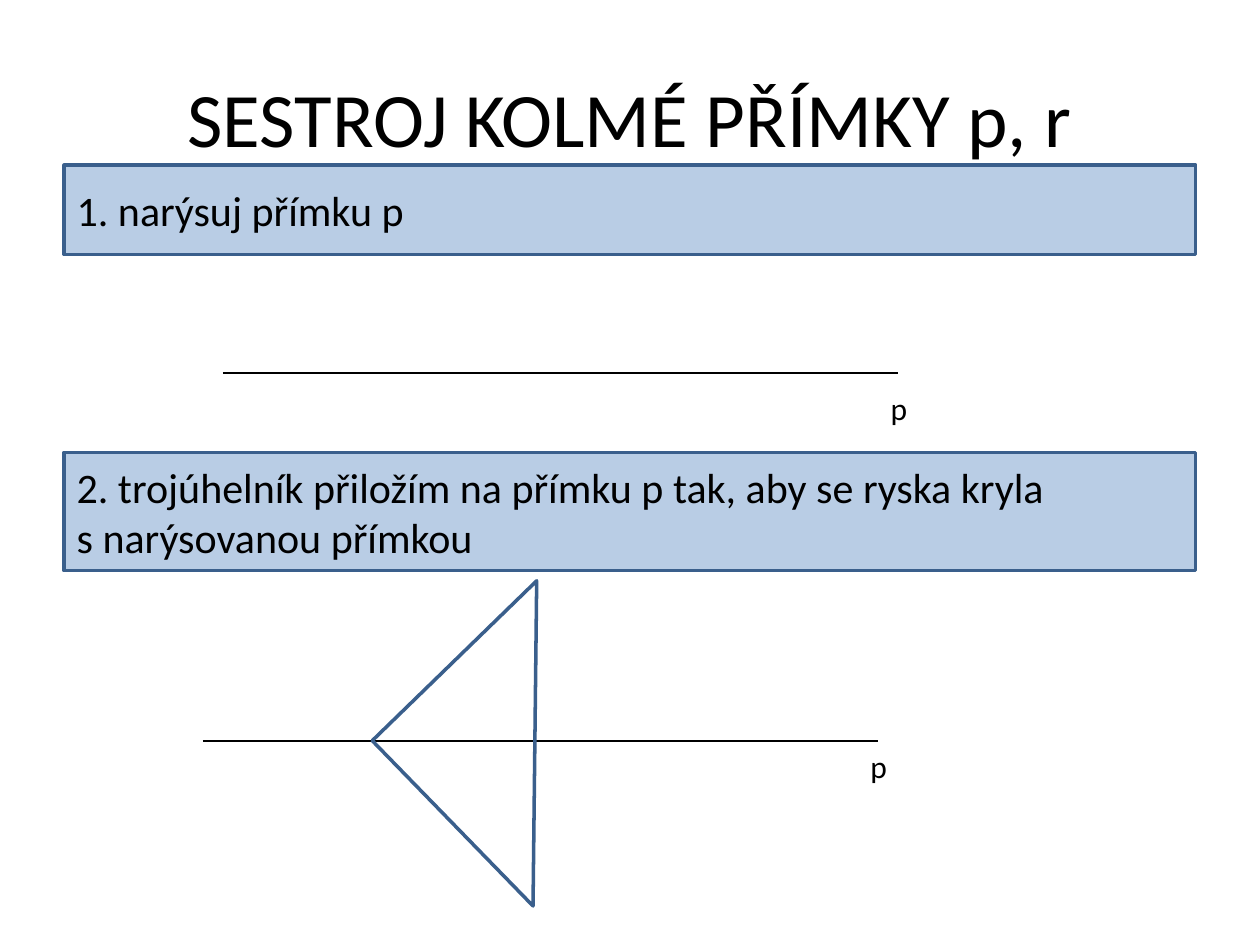
from lxml import etree
from pptx import Presentation
from pptx import util as u
from pptx.dml.color import RGBColor
from pptx.enum import shapes, text
from pptx.oxml.ns import qn

Inches = u.Inches


def tint(code):
    return RGBColor.from_string(code)


def write(frame, lines, size, align=text.PP_ALIGN.LEFT):
    for i, line in enumerate(lines):
        para = frame.paragraphs[0] if i == 0 else frame.add_paragraph()
        para.alignment = align
        run = para.add_run()
        run.text = line
        run.font.size = u.Pt(size)
        run.font.name = "Calibri"
        run.font.color.rgb = tint("000000")


deck = Presentation()
deck.slide_width, deck.slide_height = Inches(10), Inches(7.5)
slide = deck.slides.add_slide(deck.slide_layouts[5])
items = slide.shapes

title = slide.shapes.title
title.left, title.top = Inches(0.5), Inches(0.3)
title.width, title.height = Inches(9), Inches(1.25)
title.text_frame.vertical_anchor = text.MSO_ANCHOR.MIDDLE
write(title.text_frame, ["SESTROJ KOLMÉ PŘÍMKY p, r"], 44, text.PP_ALIGN.CENTER)

# Each step: box top, box height, wording, line start, line height, label top
steps = [
    (1.31, 0.71, ["1. narýsuj přímku p"], 1.77, 2.96, 3.04),
    (3.59, 0.94, ["2. trojúhelník přiložím na přímku p tak, aby se ryska kryla",
                  "s narýsovanou přímkou"], 1.61, 5.88, 5.88),
]
for top, high, lines, left, level, below in steps:
    box = items.add_shape(shapes.MSO_SHAPE.RECTANGLE, Inches(0.51), Inches(top),
                          Inches(8.98), Inches(high))
    box.shadow.inherit = False
    box.fill.solid()
    box.fill.fore_color.rgb = tint("B9CDE5")
    box.line.color.rgb = tint("3A5F8C")
    box.line.width = u.Pt(2)
    box.text_frame.word_wrap = True
    box.text_frame.vertical_anchor = text.MSO_ANCHOR.MIDDLE
    write(box.text_frame, lines, 24)

    line = items.add_connector(shapes.MSO_CONNECTOR.STRAIGHT, Inches(left), Inches(level),
                               Inches(left + 5.36), Inches(level))
    line.line.color.rgb = tint("000000")
    line.line.width = u.Pt(0.75)
    etree.SubElement(line._element.spPr, qn("a:effectLst"))

    label = items.add_textbox(Inches(left + 5.2), Inches(below), Inches(0.39), Inches(0.4))
    label.text_frame.word_wrap = True
    label.text_frame.auto_size = text.MSO_AUTO_SIZE.SHAPE_TO_FIT_TEXT
    write(label.text_frame, ["p"], 18)

ruler = items.add_shape(shapes.MSO_SHAPE.RIGHT_TRIANGLE, Inches(3.33), Inches(4.99),
                        Inches(1.83), Inches(1.82))
ruler.rotation = 45.8
ruler.shadow.inherit = False
ruler.fill.background()
ruler.line.color.rgb = tint("3A5F8C")
ruler.line.width = u.Pt(2)

deck.save("out.pptx")
